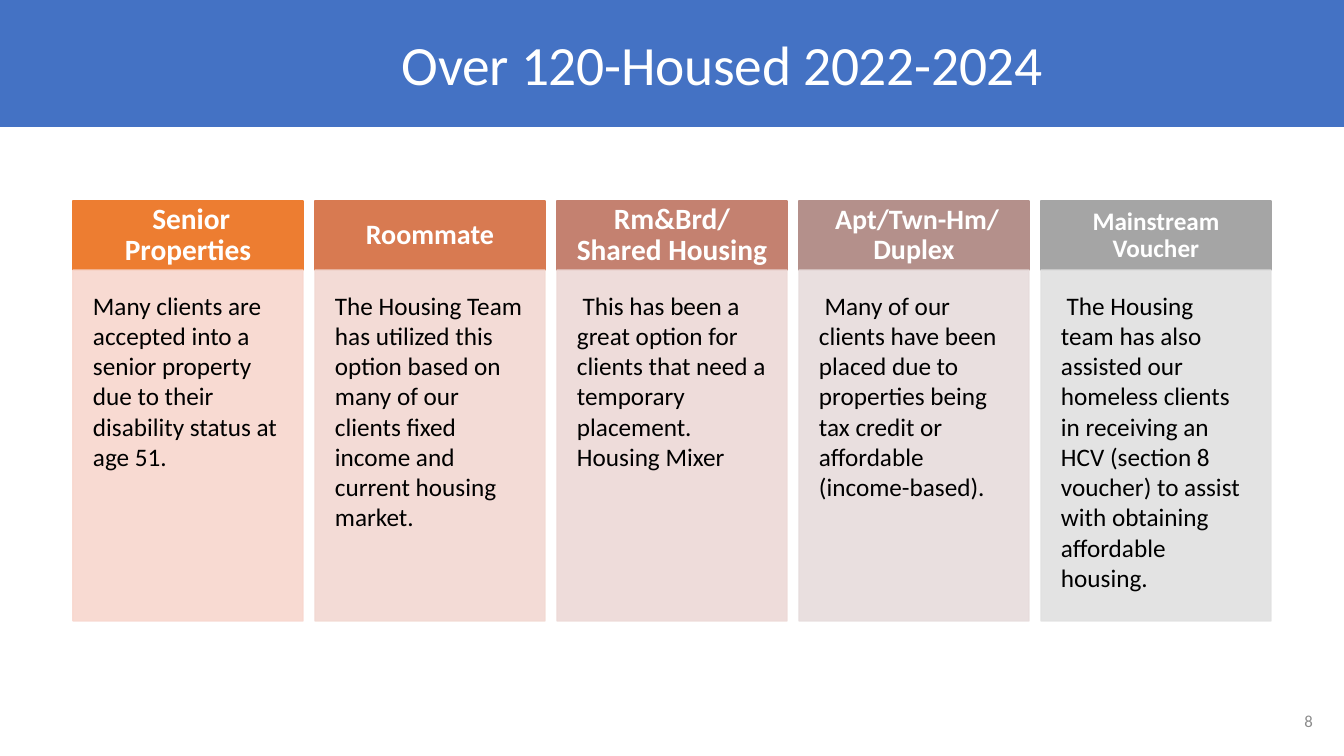
from lxml.etree import SubElement
from pptx import Presentation
from pptx.dml.color import RGBColor
from pptx.enum.shapes import MSO_SHAPE
from pptx.enum.text import MSO_ANCHOR, PP_ALIGN
from pptx.oxml.ns import qn
from pptx.util import Pt

TITLE = "Over 120-Housed 2022-2024"
PAGE_NUMBER = "8"
# heading, heading size, heading colour, panel colour, description
OPTIONS = [
    (" Senior Properties", 21, "senior", "senior_panel",
     "Many clients are accepted into a senior property due to their disability status at age 51."),
    ("Roommate", 20, "roommate", "roommate_panel",
     "The Housing Team has utilized this option based on many of our clients fixed income "
     "and current housing market."),
    ("Rm&Brd/Shared Housing", 21, "shared", "shared_panel",
     " This has been a great option for clients that need a temporary placement. Housing Mixer"),
    (" Apt/Twn-Hm/\nDuplex", 20, "apartment", "apartment_panel",
     " Many of our clients have been placed due to properties being tax credit or affordable "
     "(income-based)."),
    ("Mainstream Voucher", 18, "voucher", "voucher_panel",
     " The Housing team has also assisted our homeless clients in receiving an HCV "
     "(section 8 voucher) to assist with obtaining affordable housing."),
]
COLORS = {
    "banner": "4472C4", "white": "FFFFFF", "black": "000000", "page": "8C8C8C",
    "senior": "ED7D31", "senior_panel": "F8D7CE",
    "roommate": "D87A51", "roommate_panel": "F2D8D2",
    "shared": "C48170", "shared_panel": "EDD9D7",
    "apartment": "B4908B", "apartment_panel": "E7DCDC",
    "voucher": "A5A5A5", "voucher_panel": "E1E1E1",
}
FONT = "Calibri"
SLIDE_WIDTH, SLIDE_HEIGHT = 1344, 756
EMU_PER_PX = 12192000 / SLIDE_WIDTH
COLUMN_LEFT, COLUMN_PITCH, COLUMN_WIDTH = 73, 242, 230
HEADING_TOP, HEADING_HEIGHT, PANEL_HEIGHT = 201, 69, 351


def px(length):
    return round(length * EMU_PER_PX)


def color(name):
    return RGBColor.from_string(COLORS[name])


def set_opacity(fill_parent, percent):
    """Make the solid fill below the given XML element translucent."""
    rgb = fill_parent.find(qn("a:solidFill")).find(qn("a:srgbClr"))
    SubElement(rgb, qn("a:alpha"), val=str(percent * 1000))


def add_rectangle(slide, box, fill, outlined=True, opacity=100):
    shape = slide.shapes.add_shape(MSO_SHAPE.RECTANGLE, *map(px, box))
    shape.shadow.inherit = False
    shape.fill.solid()
    shape.fill.fore_color.rgb = color(fill)
    if outlined:
        shape.line.color.rgb = color(fill)
        shape.line.width = Pt(1)
    else:
        shape.line.fill.background()
    if opacity < 100:
        properties = shape.element.spPr
        set_opacity(properties, opacity)
        set_opacity(properties.find(qn("a:ln")), opacity)
    return shape


def write(shape, text, size, text_color, insets, anchor=MSO_ANCHOR.MIDDLE,
          align=PP_ALIGN.LEFT, line_spacing=1.0, bold=False):
    """Fill the shape with one paragraph; insets are left, top, right, bottom."""
    frame = shape.text_frame
    frame.word_wrap = True
    frame.vertical_anchor = anchor
    for side, inset in zip(("left", "top", "right", "bottom"), insets):
        setattr(frame, f"margin_{side}", px(inset))
    paragraph = frame.paragraphs[0]
    paragraph.alignment = align
    paragraph.line_spacing = line_spacing
    for index, line in enumerate(text.split("\n")):
        if index:
            paragraph.add_line_break()
        run = paragraph.add_run()
        run.text = line
        run.font.color.rgb = color(text_color)
        for name, value in {"name": FONT, "size": Pt(size), "bold": bold}.items():
            setattr(run.font, name, value)


def add_option(slide, index, option):
    heading, heading_size, heading_color, panel_color, description = option
    left = COLUMN_LEFT + index * COLUMN_PITCH
    header = add_rectangle(
        slide, (left, HEADING_TOP, COLUMN_WIDTH, HEADING_HEIGHT), heading_color)
    write(header, heading, heading_size, "white", [18] * 4,
          align=PP_ALIGN.CENTER, line_spacing=0.9, bold=True)
    panel = add_rectangle(
        slide, (left, HEADING_TOP + HEADING_HEIGHT, COLUMN_WIDTH, PANEL_HEIGHT),
        panel_color, opacity=90)
    write(panel, description, 18, "black", [20] * 4, anchor=MSO_ANCHOR.TOP)


def main():
    presentation = Presentation()
    presentation.slide_width = px(SLIDE_WIDTH)
    presentation.slide_height = px(SLIDE_HEIGHT)
    slide = presentation.slides.add_slide(presentation.slide_layouts[6])

    add_rectangle(slide, (0, 0, SLIDE_WIDTH, 127), "banner", outlined=False)
    title = slide.shapes.add_textbox(*map(px, (110, 21, 1105, 84)))
    write(title, TITLE, 39.6, "white", (292, 5, 10, 5))
    for properties in title.element.iter(qn("a:rPr")):
        properties.set("spc", "-20")

    for index, option in enumerate(OPTIONS):
        add_option(slide, index, option)

    page = slide.shapes.add_textbox(*map(px, (1253, 701, 70, 40)))
    write(page, PAGE_NUMBER, 12, "page", (10, 5, 10, 5), align=PP_ALIGN.RIGHT)
    presentation.save("out.pptx")


if __name__ == "__main__":
    main()
